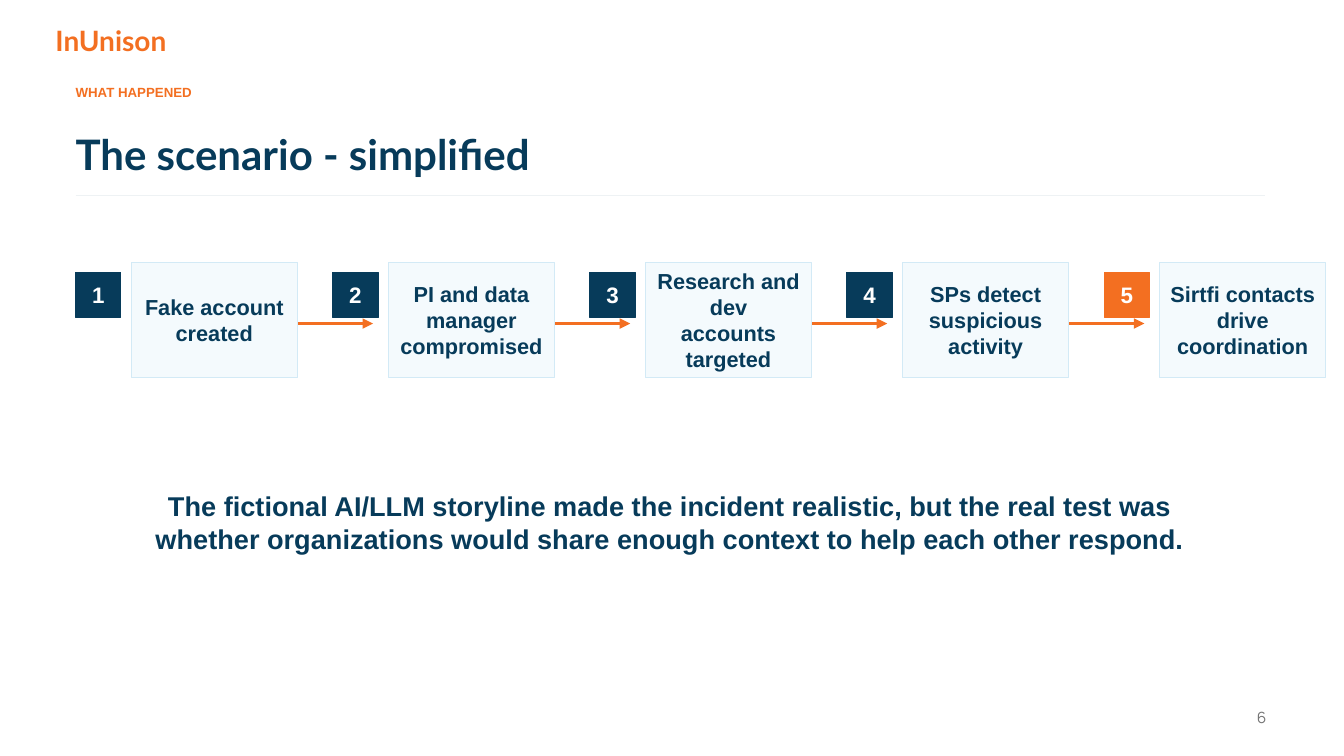
from lxml import etree
from pptx import Presentation
from pptx.dml.color import RGBColor
from pptx.enum.shapes import MSO_CONNECTOR as CONNECTOR, MSO_SHAPE as SHAPE
from pptx.enum.text import MSO_ANCHOR as ANCHOR, PP_ALIGN as ALIGN
from pptx.oxml.ns import qn
from pptx.util import Inches, Pt

COLORS = {
    "navy": "073B5A",
    "orange": "F36F21",
    "white": "FFFFFF",
    "pale": "F4FAFD",
    "border": "D3EAF6",
    "rule": "EEF2F4",
    "gray": "757575",
}
STEPS = [
    ("Fake account", "created"),
    ("PI and data manager", "compromised"),
    ("Research and dev", "accounts targeted"),
    ("SPs detect suspicious", "activity"),
    ("Sirtfi contacts drive", "coordination"),
]
STEP_PITCH = 2.55

presentation = Presentation()
presentation.slide_width = Inches(13.33)
presentation.slide_height = Inches(7.5)
slide = presentation.slides.add_slide(presentation.slide_layouts[6])


def add_text(*lines, at, size, color="navy", font="Arial", bold=True,
             align=ALIGN.LEFT, fill=None, border=None):
    box = [Inches(value) for value in at]
    if fill:
        shape = slide.shapes.add_shape(SHAPE.RECTANGLE, *box)
        shape.shadow.inherit = False
        shape.fill.solid()
        shape.fill.fore_color.rgb = RGBColor.from_string(COLORS[fill])
        shape.line.color.rgb = RGBColor.from_string(COLORS[border])
        shape.line.width = Pt(0.75)
    else:
        shape = slide.shapes.add_textbox(*box)
    frame = shape.text_frame
    frame.word_wrap = True
    frame.vertical_anchor = ANCHOR.MIDDLE
    frame.margin_left = frame.margin_right = Inches(0)
    frame.margin_top = frame.margin_bottom = Inches(0)
    frame.text = "\n".join(lines)
    for paragraph in frame.paragraphs:
        paragraph.alignment = align
        paragraph.font.name = font
        paragraph.font.size = Pt(size)
        paragraph.font.bold = bold
        paragraph.font.color.rgb = RGBColor.from_string(COLORS[color])


def add_line(left, right, y, color, width, arrow=False):
    connector = slide.shapes.add_connector(
        CONNECTOR.STRAIGHT, Inches(left), Inches(y), Inches(right), Inches(y))
    connector.line.color.rgb = RGBColor.from_string(COLORS[color])
    connector.line.width = Pt(width)
    if arrow:
        etree.SubElement(connector.line._get_or_add_ln(), qn("a:tailEnd"), type="triangle")
    etree.SubElement(connector._element.spPr, qn("a:effectLst"))


add_text("6", at=(11.51, 6.92, 1.05, 0.4), size=11, color="gray",
         font="Manrope", bold=False, align=ALIGN.RIGHT)
add_text("InUnison", at=(0.55, 0.22, 1.95, 0.35), size=20, color="orange", font="Lato")
add_text("WHAT HAPPENED", at=(0.75, 0.82, 10.2, 0.18), size=9.5, color="orange")
add_text("The scenario - simplified", at=(0.75, 1.28, 11.6, 0.5), size=30, font="Lato")
add_line(0.75, 12.55, 1.94, "rule", 1)

for number in range(1, len(STEPS)):
    start = number * STEP_PITCH
    add_line(start, start + 1.15, 3.21, "orange", 2.5, arrow=True)

for index, step in enumerate(STEPS):
    left = 0.75 + index * STEP_PITCH
    accent = "orange" if index == len(STEPS) - 1 else "navy"
    add_text(str(index + 1), at=(left, 2.7, 0.45, 0.45), size=16, color="white",
             align=ALIGN.CENTER, fill=accent, border=accent)
    add_text(*step, at=(left + 0.55, 2.6, 1.65, 1.15), size=15.5,
             align=ALIGN.CENTER, fill="pale", border="border")

add_text("The fictional AI/LLM storyline made the incident realistic, but the real test was "
         "whether organizations would share enough context to help each other respond.",
         at=(1.25, 4.75, 10.8, 0.86), size=19.4, align=ALIGN.CENTER)

presentation.save("out.pptx")
